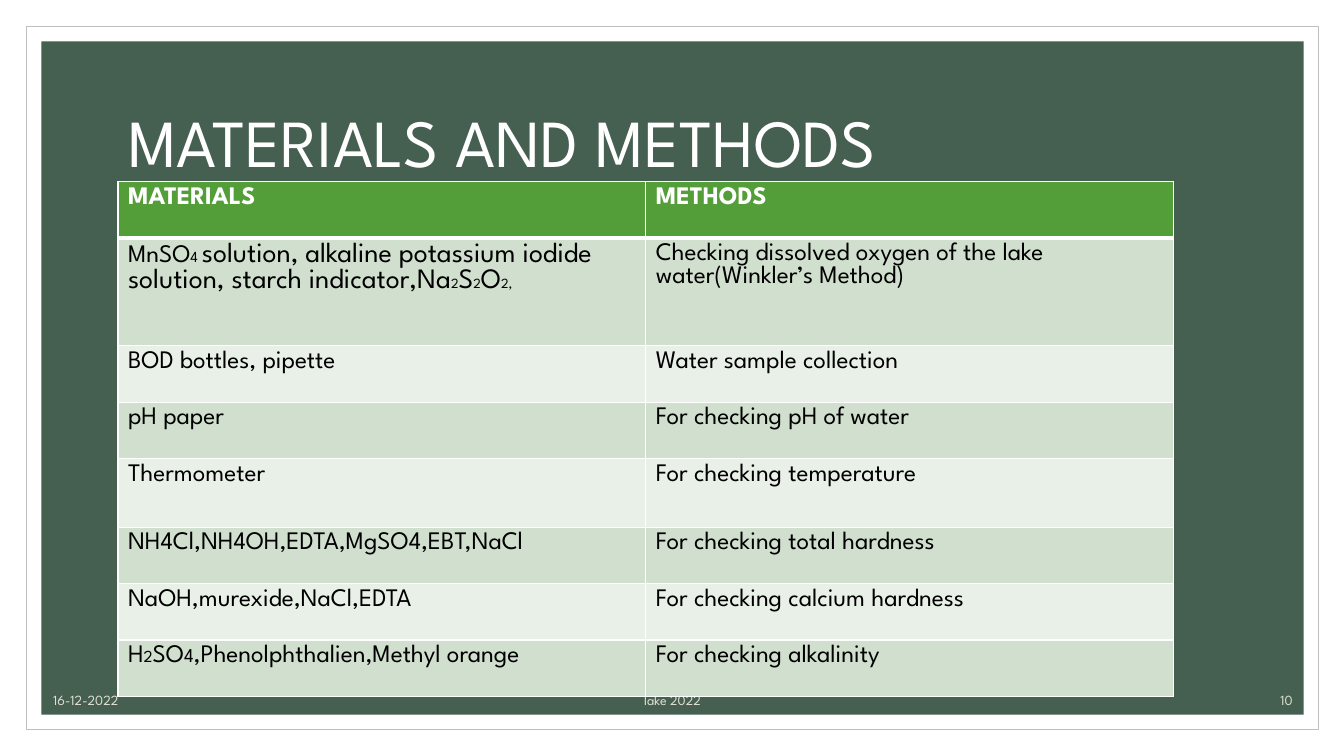
"""Build the materials and methods slide."""
from dataclasses import dataclass

from lxml import etree
from pptx import Presentation
from pptx.dml.color import RGBColor
from pptx.enum.shapes import MSO_SHAPE
from pptx.enum.text import MSO_ANCHOR, MSO_AUTO_SIZE, PP_ALIGN
from pptx.oxml.ns import qn
from pptx.util import Inches, Pt

RECT = MSO_SHAPE.RECTANGLE
LEFT, CENTER, RIGHT = PP_ALIGN.LEFT, PP_ALIGN.CENTER, PP_ALIGN.RIGHT
MIDDLE, BOTTOM = MSO_ANCHOR.MIDDLE, MSO_ANCHOR.BOTTOM
NO_FIT = MSO_AUTO_SIZE.NONE
FONT = "League Spartan"
COLORS = {
    "white": "FFFFFF", "black": "000000", "frame": "BFBFBF", "panel": "455F51",
    "header": "549E39", "odd": "D1DFCE", "even": "E9F0E8", "footer": "E3DED1",
}


@dataclass
class Panel:
    """A background rectangle."""
    box: tuple[float, float, float, float]
    fill: str
    line: str | None = None


@dataclass
class Footer:
    """A small text at the foot of the slide."""
    text: str
    left: float
    width: float
    align: PP_ALIGN


@dataclass
class Row:
    """A table row, each cell a list of (text, size) runs."""
    materials: list[tuple[str, float]]
    methods: list[tuple[str, float]]
    height: float = 0.56


PANELS = [
    Panel((0.26, 0.26, 12.82, 6.98), "white", "frame"),
    Panel((0.41, 0.41, 12.52, 6.68), "panel"),
]
FOOTERS = [
    Footer("lake 2022", 3.82, 5.7, CENTER),
    Footer("10", 11.32, 1.6, RIGHT),
    Footer("16-12-2022", 0.43, 3, LEFT),
]
ROWS = [
    Row([("MATERIALS", 18)], [("METHODS", 18)]),
    Row([("MnSO", 18), ("4 ", 11),
         ("solution, alkaline potassium iodide solution, starch indicator,Na", 20),
         ("2", 10), ("S", 20), ("2", 10), ("O", 20), ("2,", 10)],
        [("Checking dissolved oxygen of the lake water(Winkler’s Method)", 18)], 1.07),
    Row([("BOD bottles, pipette", 18)], [("Water sample collection", 18)]),
    Row([("pH paper", 18)], [("For checking pH of water", 18)]),
    Row([("Thermometer", 18)], [("For checking temperature", 18)], 0.68),
    Row([("NH4Cl,NH4OH,EDTA,MgSO4,EBT,NaCl", 18)], [("For checking total hardness", 18)]),
    Row([("NaOH,murexide,NaCl,EDTA", 18)], [("For checking calcium hardness", 18)]),
    Row([("H", 18), ("2", 12), ("SO", 18), ("4", 14),
         (",Phenolphthalien,Methyl orange", 18)],
        [("For checking alkalinity", 18)]),
]


def rgb(name: str) -> RGBColor:
    """Return the named colour."""
    return RGBColor.from_string(COLORS[name])


def add_text(p, text: str, *, size: float, color: str, bold: bool = False) -> None:
    """Add a formatted run to a paragraph."""
    r = p.add_run()
    r.text = text
    r.font.name = FONT
    r.font.size = Pt(size)
    r.font.bold = bold
    r.font.color.rgb = rgb(color)


def add_panel(s, panel: Panel) -> None:
    """Draw a background rectangle."""
    sp = s.shapes.add_shape(RECT, *map(Inches, panel.box))
    sp.shadow.inherit = False
    sp.fill.solid()
    sp.fill.fore_color.rgb = rgb(panel.fill)
    if panel.line:
        sp.line.color.rgb = rgb(panel.line)
        sp.line.width = Pt(0.5)
    else:
        sp.line.fill.background()


def add_title(s, text: str) -> None:
    """Place the slide title and bring it in front of the panels."""
    sp = s.shapes.title
    s.shapes._spTree.append(sp._element)
    sp.left, sp.top, sp.width, sp.height = map(Inches, (1.17, 0.7, 11, 1.5))
    tf = sp.text_frame
    tf.word_wrap = True
    tf.auto_size = NO_FIT
    tf.vertical_anchor = MIDDLE
    p = tf.paragraphs[0]
    p.alignment = LEFT
    p.line_spacing = 0.9
    add_text(p, text, size=48, color="white")


def add_footer(s, footer: Footer) -> None:
    """Draw a footer text."""
    sp = s.shapes.add_textbox(Inches(footer.left), Inches(6.8),
                              Inches(footer.width), Inches(0.28))
    tf = sp.text_frame
    tf.word_wrap = True
    tf.vertical_anchor = BOTTOM
    p = tf.paragraphs[0]
    p.alignment = footer.align
    add_text(p, footer.text, size=10, color="footer")


def set_borders(cell, top: float, bottom: float) -> None:
    """Give a cell white borders ahead of its fill."""
    pr = cell._tc.get_or_add_tcPr()
    widths = {"a:lnL": 1, "a:lnR": 1, "a:lnT": top, "a:lnB": bottom}
    for i, (tag, width) in enumerate(widths.items()):
        ln = etree.Element(qn(tag), w=str(Pt(width)))
        fill = etree.SubElement(ln, qn("a:solidFill"))
        etree.SubElement(fill, qn("a:srgbClr"), val=COLORS["white"])
        pr.insert(i, ln)


def add_materials_table(s, rows: list[Row]) -> None:
    """Draw the table of materials and methods."""
    height = sum(row.height for row in rows)
    frame = s.shapes.add_table(len(rows), 2, Inches(1.17), Inches(1.8),
                               Inches(10.47), Inches(height))
    table = frame.table
    for i, row in enumerate(rows):
        table.rows[i].height = Inches(row.height)
        header = i == 0
        fill = "header" if header else "odd" if i % 2 else "even"
        for j, runs in enumerate((row.materials, row.methods)):
            cell = table.cell(i, j)
            cell.fill.solid()
            cell.fill.fore_color.rgb = rgb(fill)
            set_borders(cell, 3 if i == 1 else 1, 3 if header else 1)
            p = cell.text_frame.paragraphs[0]
            for text, size in runs:
                add_text(p, text, size=size, bold=header,
                         color="white" if header else "black")


def main() -> None:
    """Build and save the slide."""
    prs = Presentation()
    prs.slide_width, prs.slide_height = Inches(13.33), Inches(7.5)
    s = prs.slides.add_slide(prs.slide_layouts[5])
    for panel in PANELS:
        add_panel(s, panel)
    add_title(s, "MATERIALS AND METHODS")
    for footer in FOOTERS:
        add_footer(s, footer)
    add_materials_table(s, ROWS)
    prs.save("out.pptx")


if __name__ == "__main__":
    main()
